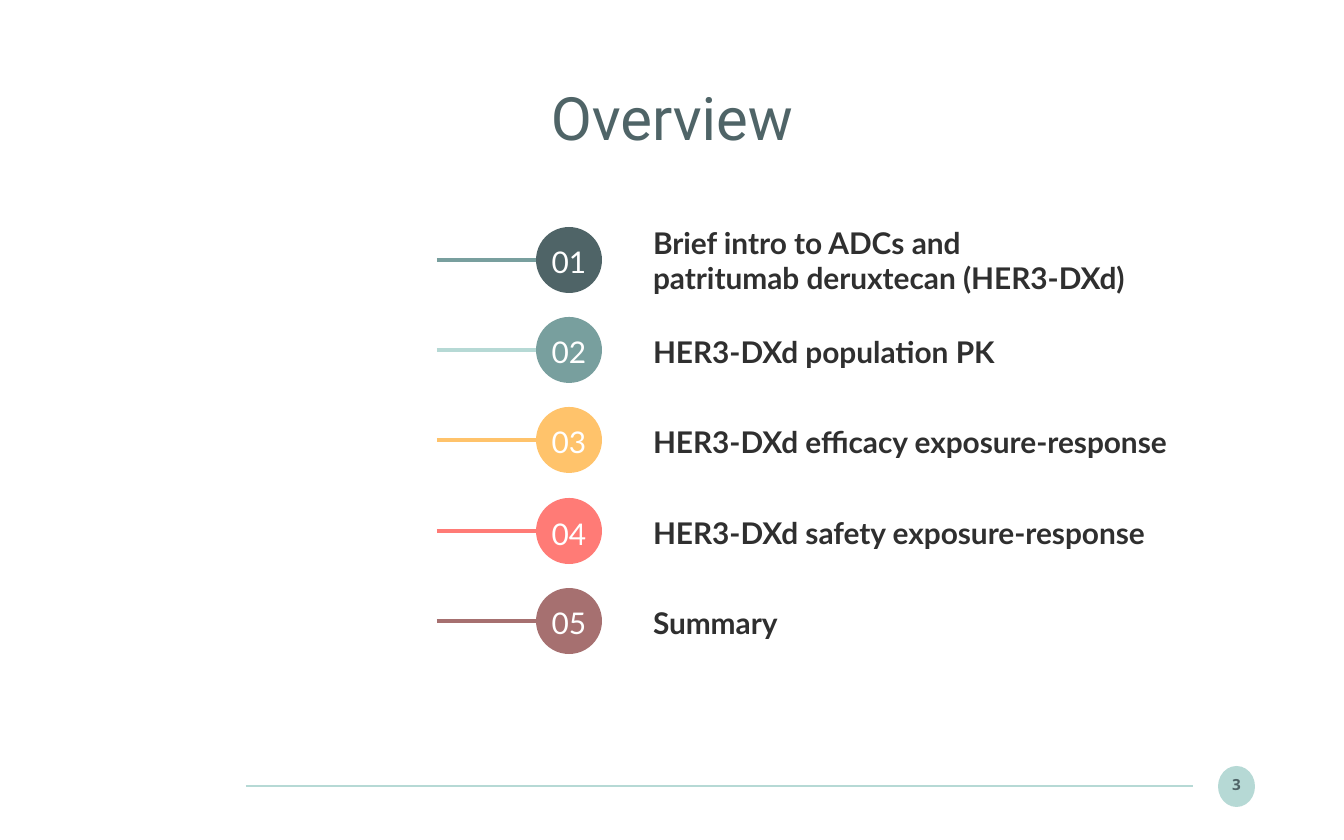
from dataclasses import dataclass

from lxml import etree
from pptx import Presentation
from pptx.dml.color import RGBColor
from pptx.enum import shapes, text
from pptx.oxml import ns
from pptx.util import Emu, Pt

SCALE = 914400 / 134.4


@dataclass(frozen=True)
class Theme:
    slate: str = "4F6467"
    teal: str = "789F9E"
    mint: str = "B6D9D5"
    amber: str = "FFC36B"
    coral: str = "FF7B76"
    plum: str = "A67070"
    ink: str = "2F2F2F"
    white: str = "FFFFFF"
    head: str = "Roboto"
    body: str = "Lato"
    foot: str = "Open Sans"
    big: float = 32
    mid: float = 16
    small: float = 8.2


T = Theme()
TOP, MID = text.MSO_ANCHOR.TOP, text.MSO_ANCHOR.MIDDLE
LEFT, CENTER = text.PP_ALIGN.LEFT, text.PP_ALIGN.CENTER

ITEMS = [
    (["Brief intro to ADCs and", "patritumab deruxtecan (HER3-DXd)"], T.slate, T.teal),
    (["HER3-DXd population PK"], T.teal, T.mint),
    (["HER3-DXd efficacy exposure-response"], T.amber, T.amber),
    (["HER3-DXd safety exposure-response"], T.coral, T.coral),
    (["Summary"], T.plum, T.plum),
]


def px(n):
    return Emu(round(n * SCALE))


def apply(obj, values):
    for name, value in values.items():
        setattr(obj, name, value)


def write(shape, lines, face, size, color, bold=False, align=LEFT, anchor=TOP, gap=1.0):
    frame = shape.text_frame
    apply(frame, dict(margin_left=0, margin_top=0, margin_right=0, margin_bottom=0,
                      word_wrap=True, auto_size=text.MSO_AUTO_SIZE.NONE,
                      vertical_anchor=anchor))
    frame.text = "\n".join(lines)
    for para in frame.paragraphs:
        apply(para, dict(alignment=align, line_spacing=gap))
        for run in para.runs:
            apply(run.font, dict(name=face, size=Pt(size), bold=bold))
            run.font.color.rgb = RGBColor.from_string(color)


def label(slide, box, lines, *style, **more):
    write(slide.shapes.add_textbox(*map(px, box)), lines, *style, **more)


def disc(slide, box, color):
    shape = slide.shapes.add_shape(shapes.MSO_SHAPE.OVAL, *map(px, box))
    shape.shadow.inherit = False
    shape.fill.solid()
    shape.fill.fore_color.rgb = RGBColor.from_string(color)
    shape.line.fill.background()


def rule(slide, x, y, end, color, width):
    line = slide.shapes.add_connector(
        shapes.MSO_CONNECTOR.STRAIGHT, px(x), px(y), px(end), px(y))
    line.line.color.rgb = RGBColor.from_string(color)
    line.line.width = Pt(width)
    etree.SubElement(line._element.spPr, ns.qn("a:effectLst"))


def title(slide, box):
    shape = slide.shapes.title
    apply(shape, dict(zip(("left", "top", "width", "height"), map(px, box))))
    write(shape, ["Overview"], T.head, T.big, T.slate, align=CENTER)


def entry(slide, box, num, lines, fill, stroke):
    x, y, w, h = box
    dot = x + 99
    disc(slide, (dot, y, h, h), fill)
    rule(slide, x, y + h // 2, dot, stroke, 2.25)
    label(slide, (dot + 7, y + 10, h - 14, 48), [f"{num:02}"],
          T.body, T.mid, T.white, align=CENTER, gap=1.2)
    label(slide, (x + 216, y + 17, w - 216, 32), lines, T.body, T.mid, T.ink,
          bold=True, anchor=MID if len(lines) > 1 else TOP)


def agenda(slide, box):
    x, y, w, h = box
    size = 66
    step = (h - size) / (len(ITEMS) - 1)
    for i, item in enumerate(ITEMS):
        entry(slide, (x, y + round(i * step), w, size), i + 1, *item)


def footer(slide, box):
    x, y, w, h = box
    dot = x + w - 37
    disc(slide, (dot, y, 37, h), T.mint)
    label(slide, (dot + 4, y + 9, 29, 20), ["3"],
          T.foot, T.small, T.slate, bold=True, align=CENTER)
    rule(slide, x, y + h // 2, dot - 25, T.mint, 1.5)


def main():
    deck = Presentation()
    apply(deck, dict(slide_width=px(1344), slide_height=px(840)))
    slide = deck.slides.add_slide(deck.slide_layouts[5])
    footer(slide, (246, 766, 1009, 41))
    agenda(slide, (437, 227, 773, 427))
    title(slide, (93, 81, 1158, 64))
    deck.save("out.pptx")


if __name__ == "__main__":
    main()
